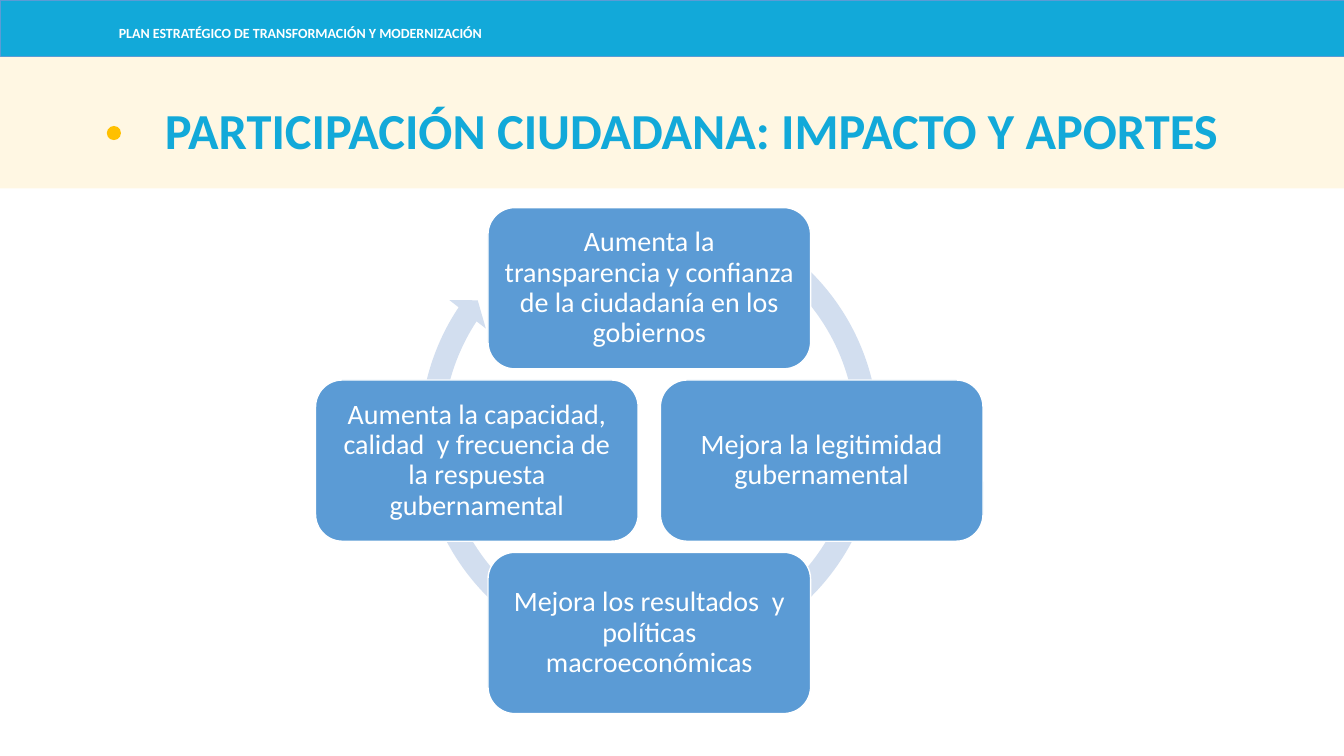
from dataclasses import dataclass
from math import cos, radians, sin

from lxml import etree
from pptx import Presentation
from pptx.dml.color import RGBColor
from pptx.enum.shapes import MSO_SHAPE
from pptx.enum.text import MSO_ANCHOR, PP_ALIGN
from pptx.oxml.ns import qn
from pptx.util import Inches, Pt


@dataclass(frozen=True)
class Theme:
    font: str = "Calibri"
    brand: str = "12A9D9"
    cream: str = "FFF2CC"
    gold: str = "FFC000"
    blue: str = "5B9BD5"
    pale: str = "D2DEEF"
    white: str = "FFFFFF"
    small: int = 10
    body: int = 20
    title: int = 36


class Deck:
    def __init__(self, theme):
        self.theme = theme
        self.file = Presentation()
        self.file.slide_width = Inches(13.33)
        self.file.slide_height = Inches(7.5)
        self.slide = self.file.slides.add_slide(self.file.slide_layouts[6])

    def shape(self, kind, box, fill, line=None, width=1, alpha=None):
        """Add a preset shape; alpha is the opacity in percent."""
        item = self.slide.shapes.add_shape(kind, *map(Inches, box))
        item.shadow.inherit = False
        item.fill.solid()
        item.fill.fore_color.rgb = RGBColor.from_string(fill)
        if alpha is not None:
            color = item.element.spPr.find(".//" + qn("a:srgbClr"))
            etree.SubElement(color, qn("a:alpha")).set("val", str(alpha * 1000))
        if line:
            item.line.color.rgb = RGBColor.from_string(line)
            item.line.width = Pt(width)
        else:
            item.line.fill.background()
        return item

    def letter(self, item, text, size, color, bold=False,
               align=PP_ALIGN.CENTER, anchor=MSO_ANCHOR.MIDDLE, space=0.9):
        """Put styled text into a shape."""
        frame = item.text_frame
        frame.word_wrap = True
        frame.vertical_anchor = anchor
        para = frame.paragraphs[0]
        para.alignment = align
        para.line_spacing = space
        run = para.add_run()
        run.text = text
        run.font.name = self.theme.font
        run.font.size = Pt(size)
        run.font.bold = bold
        run.font.color.rgb = RGBColor.from_string(color)

    def label(self, box, text, size, color, **style):
        item = self.slide.shapes.add_textbox(*map(Inches, box))
        self.letter(item, text, size, color, bold=True, **style)

    def wheel(self, box, turns):
        item = self.shape(MSO_SHAPE.CIRCULAR_ARROW, box, self.theme.pale)
        for i, turn in enumerate(turns):
            item.adjustments[i] = turn

    def card(self, x, y, text):
        """Add a rounded box centred on x, y."""
        wide, high = 3.2, 1.6
        box = (x - wide / 2, y - high / 2, wide, high)
        item = self.shape(MSO_SHAPE.ROUNDED_RECTANGLE, box,
                          self.theme.blue, self.theme.white)
        frame = item.text_frame
        frame.margin_left = frame.margin_right = Inches(0.08)
        frame.margin_top = frame.margin_bottom = Inches(0.08)
        self.letter(item, text, self.theme.body, self.theme.white)


def main():
    theme = Theme()
    deck = Deck(theme)

    deck.shape(MSO_SHAPE.RECTANGLE, (0, 0.56, 13.33, 1.31), theme.cream, alpha=54)
    deck.shape(MSO_SHAPE.RECTANGLE, (0, 0, 13.33, 0.56), theme.brand,
               theme.blue, 0.5)
    deck.label((1.08, 0.23, 3.9, 0.22),
               "PLAN ESTRATÉGICO DE TRANSFORMACIÓN Y MODERNIZACIÓN",
               theme.small, theme.white, align=PP_ALIGN.LEFT,
               anchor=MSO_ANCHOR.TOP, space=0.8)
    deck.label((1.2, 0.96, 11.32, 0.68),
               "PARTICIPACIÓN CIUDADANA: IMPACTO Y APORTES",
               theme.title, theme.brand, anchor=MSO_ANCHOR.BOTTOM)
    deck.shape(MSO_SHAPE.OVAL, (1.06, 1.25, 0.14, 0.14), theme.gold)

    deck.wheel((4.05, 1.92, 4.78, 4.78), (0.047, 2.729, 128.084, 180.466, 0.048))
    steps = (
        "Aumenta la transparencia y confianza de la ciudadanía en los gobiernos",
        "Mejora la legitimidad gubernamental",
        "Mejora los resultados  y políticas macroeconómicas",
        "Aumenta la capacidad, calidad  y frecuencia de la respuesta gubernamental",
    )
    mid_x, mid_y, reach = 6.44, 4.57, 1.71
    for i, step in enumerate(steps):
        turn = radians(360 / len(steps) * i - 90)
        deck.card(mid_x + reach * cos(turn), mid_y + reach * sin(turn), step)

    deck.file.save("out.pptx")


if __name__ == "__main__":
    main()
